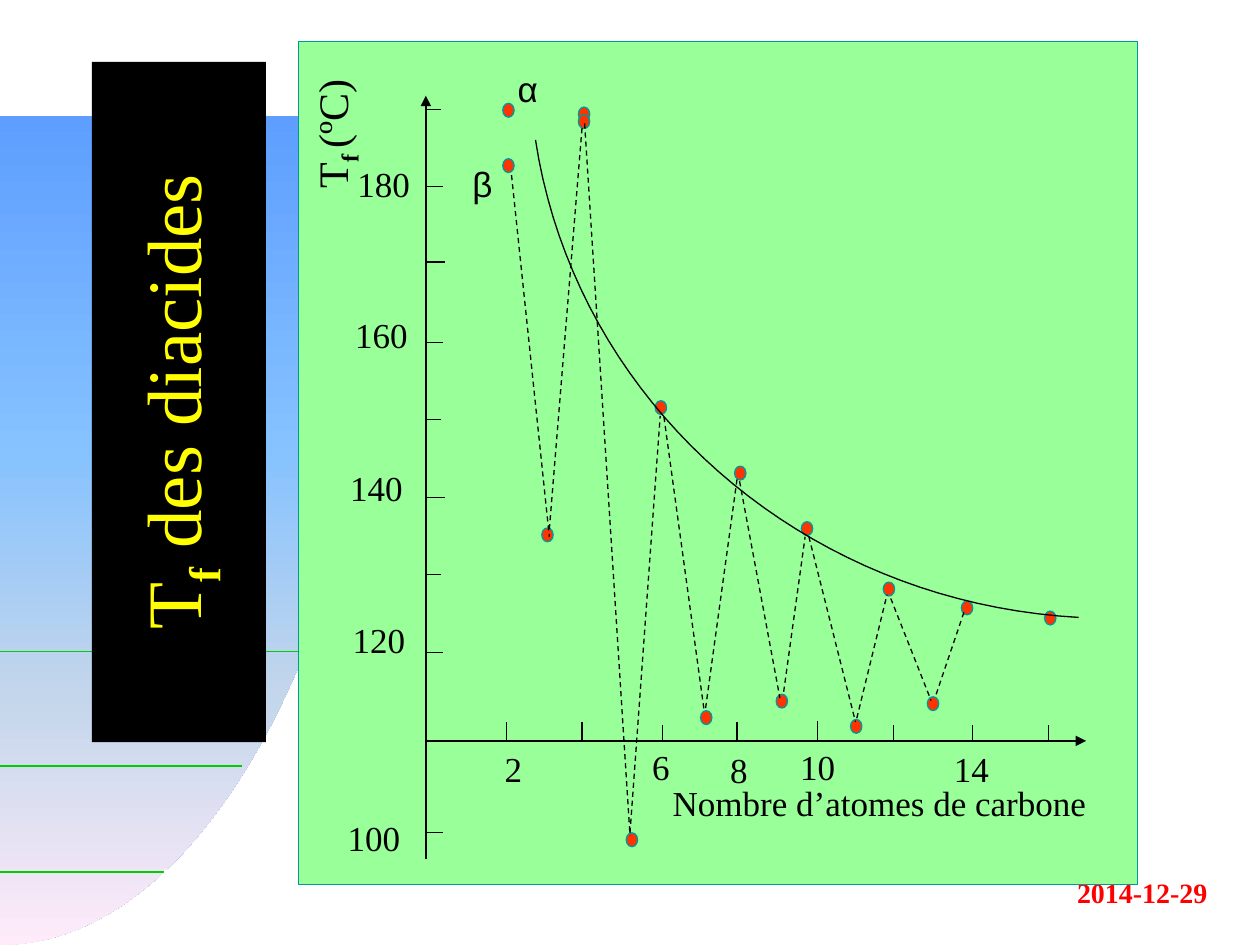
"""Builds the slide plotting the melting points of diacids against carbon count."""
from lxml import etree
from pptx import Presentation
from pptx.dml.color import RGBColor
from pptx.enum.dml import MSO_LINE
from pptx.enum.shapes import MSO_CONNECTOR, MSO_SHAPE
from pptx.enum.text import MSO_ANCHOR, PP_ALIGN
from pptx.oxml.ns import qn
from pptx.util import Inches, Pt

STRAIGHT, RECT, OVAL = MSO_CONNECTOR.STRAIGHT, MSO_SHAPE.RECTANGLE, MSO_SHAPE.OVAL
DASH, MIDDLE = MSO_LINE.DASH, MSO_ANCHOR.MIDDLE
LEFT, CENTER, RIGHT = PP_ALIGN.LEFT, PP_ALIGN.CENTER, PP_ALIGN.RIGHT
HEX = {"black": "010000", "white": "FFFFFF", "panel": "99FF99", "teal": "009999", "dot": "FF3300",
       "rule": "00CC00", "title": "FFFF00", "date": "FF0000"}
COLORS = {name: RGBColor.from_string(value) for name, value in HEX.items()}
SERIF = "Times New Roman"

prs = Presentation()
prs.slide_width, prs.slide_height = Inches(10), Inches(7.5)
s = prs.slides.add_slide(prs.slide_layouts[5])
shapes = s.shapes


def add_line(x1, y1, x2, y2, color="black", dash=None, arrow=False):
    line = shapes.add_connector(STRAIGHT, Inches(x1), Inches(y1), Inches(x2), Inches(y2))
    line.line.color.rgb, line.line.width = COLORS[color], Pt(0.75)
    if dash:
        line.line.dash_style = dash
    if arrow:
        etree.SubElement(line.line._get_or_add_ln(), qn("a:tailEnd"), type="triangle")
    etree.SubElement(line._element.spPr, qn("a:effectLst"))


def add_text(sp, runs, size, color="black", align=LEFT, font=SERIF, bold=False):
    tf = sp.text_frame
    tf.word_wrap = True
    p = tf.paragraphs[0]
    p.alignment = align
    for text, subscript in runs:
        r = p.add_run()
        r.text = text
        fmt = {"name": font, "size": Pt(size), "bold": bold or subscript}
        for key, value in fmt.items():
            setattr(r.font, key, value)
        r.font.color.rgb = COLORS[color]
        if subscript:
            r.font._element.set("baseline", "-25000")
    return p


STEPS = [i / 40 for i in range(41)]
curves = {}
for name, nodes in {"backdrop": [(0, 7.5), (1.75, 7.5), (3.17, 4.56), (3.17, 0.92)],
                    "trend": [(8.56, 4.9), (6.37, 4.78), (4.57, 3.2), (4.25, 1.11)]}.items():
    curves[name] = [tuple(Inches((1 - t) ** 3 * a + 3 * t * (1 - t) ** 2 * b
                                 + 3 * t ** 2 * (1 - t) * c + t ** 3 * d)
                          for a, b, c, d in zip(*nodes)) for t in STEPS]

fb = shapes.build_freeform(*curves["backdrop"][0])
fb.add_line_segments(curves["backdrop"][1:] + [(0, Inches(0.92))], close=True)
sp = fb.convert_to_shape()
sp.shadow.inherit = False
sp.line.fill.background()
sp.fill.gradient()
sp.fill.gradient_angle = 270
stops = sp._element.spPr.find(qn("a:gradFill")).find(qn("a:gsLst"))
for old in list(stops):
    stops.remove(old)
for pos, color in [(0, "5E9EFF"), (40, "85C2FF"), (70, "C4D6EB"), (100, "FFEBFA")]:
    stop = etree.SubElement(stops, qn("a:gs"), pos=str(pos * 1000))
    etree.SubElement(stop, qn("a:srgbClr"), val=color)

for x, y in [(1.33, 6.92), (1.92, 6.08), (2.42, 5.17)]:
    add_line(0, y, x, y, "rule")
sp = shapes.add_textbox(Inches(7.43), Inches(6.9), Inches(2.25), Inches(0.37))
add_text(sp, [("2014-12-29", False)], 16, "date", RIGHT, bold=True)

for kind, box, fill, outline in [(RECT, (1.3, 6.9, 1.88, 0.37), "white", None),
                                 (RECT, (2.37, 0.33, 6.66, 6.69), "panel", "teal")]:
    sp = shapes.add_shape(kind, *map(Inches, box))
    sp.shadow.inherit = False
    sp.fill.solid()
    sp.fill.fore_color.rgb = COLORS[fill]
    if outline:
        sp.line.color.rgb, sp.line.width = COLORS[outline], Pt(0.75)
    else:
        sp.line.fill.background()

title = shapes.title
title.element.getparent().append(title.element)
title.left, title.top, title.width, title.height = map(Inches, (-1.28, 2.5, 5.4, 1.38))
title.rotation = 270
title.fill.solid()
title.fill.fore_color.rgb = COLORS["black"]
title.text_frame.vertical_anchor = MIDDLE
p = add_text(title, [("T", False), ("f", True), (" des diacides", False)], 44, "title", CENTER)
p.line_spacing = 0.7

add_line(3.41, 5.88, 8.62, 5.88, arrow=True)
for x, top in [(4.02, 5.73), (4.62, 5.73), (5.26, 5.75), (5.85, 5.73),
               (6.49, 5.72), (7.09, 5.75), (7.72, 5.75), (8.32, 5.75)]:
    add_line(x, 5.88, x, top)
add_line(3.38, 6.82, 3.38, 0.76, arrow=True)
for y, right in [(0.87, 3.5), (1.48, 3.52), (2.08, 3.53), (2.72, 3.52), (3.33, 3.5),
                 (3.95, 3.53), (4.56, 3.5), (5.18, 3.52), (5.88, 3.52), (6.61, 3.52)]:
    add_line(3.38, y, right, y)

for text, x, y, w, align, font in [
        ("2", 3.87, 5.88, 0.41, CENTER, SERIF), ("6", 5.04, 5.87, 0.41, CENTER, SERIF),
        ("8", 5.66, 5.89, 0.41, CENTER, SERIF), ("10", 6.23, 5.87, 0.52, CENTER, SERIF),
        ("14", 7.45, 5.88, 0.52, CENTER, SERIF), ("180", 2.7, 1.24, 0.69, CENTER, SERIF),
        ("160", 2.72, 2.44, 0.65, LEFT, SERIF), ("140", 2.68, 3.65, 0.65, LEFT, SERIF),
        ("120", 2.7, 4.86, 0.65, LEFT, SERIF), ("100", 2.66, 6.43, 0.69, LEFT, SERIF),
        ("Nombre d’atomes de carbone", 5.24, 6.15, 3.5, LEFT, SERIF),
        ("α", 4.01, 0.49, 0.39, LEFT, "Arial"), ("β", 3.65, 1.24, 0.39, LEFT, "Arial")]:
    sp = shapes.add_textbox(Inches(x), Inches(y), Inches(w), Inches(0.43))
    add_text(sp, [(text, False)], 20, align=align, font=font)
sp = shapes.add_textbox(Inches(2.02), Inches(0.73), Inches(1.22), Inches(0.5))
sp.rotation = 270
add_text(sp, [("T", False), ("f ", True), ("(ºC)", False)], 24)

for x, y in [(4.97, 6.61), (3.99, 0.82), (4.3, 4.19), (4.59, 0.85), (4.59, 0.91), (5.2, 3.18),
             (5.56, 5.64), (5.83, 3.7), (6.16, 5.51), (6.36, 4.14), (3.99, 1.26), (6.75, 5.71),
             (7.01, 4.62), (7.36, 5.53), (7.63, 4.77), (8.29, 4.85)]:
    sp = shapes.add_shape(OVAL, Inches(x), Inches(y), Inches(0.09), Inches(0.11))
    sp.shadow.inherit = False
    sp.fill.solid()
    sp.fill.fore_color.rgb = COLORS["dot"]
    sp.line.color.rgb, sp.line.width = COLORS["teal"], Pt(0.75)

for ends in [(4.06, 1.39, 4.36, 4.26), (4.36, 4.2, 4.62, 1.01), (4.64, 0.98, 5, 6.63),
             (5, 6.61, 5.24, 3.3), (5.27, 3.31, 5.59, 5.65), (5.6, 5.62, 5.85, 3.8),
             (5.87, 3.82, 6.19, 5.54), (6.22, 5.49, 6.39, 4.26), (6.42, 4.26, 6.79, 5.73),
             (6.8, 5.7, 7.04, 4.72), (7.07, 4.75, 7.39, 5.56), (7.43, 5.51, 7.65, 4.86)]:
    add_line(*ends, dash=DASH)

fb = shapes.build_freeform(*curves["trend"][0])
fb.add_line_segments(curves["trend"][1:], close=False)
sp = fb.convert_to_shape()
sp.shadow.inherit = False
sp.fill.background()
sp.line.color.rgb, sp.line.width = COLORS["black"], Pt(0.75)

prs.save("out.pptx")
